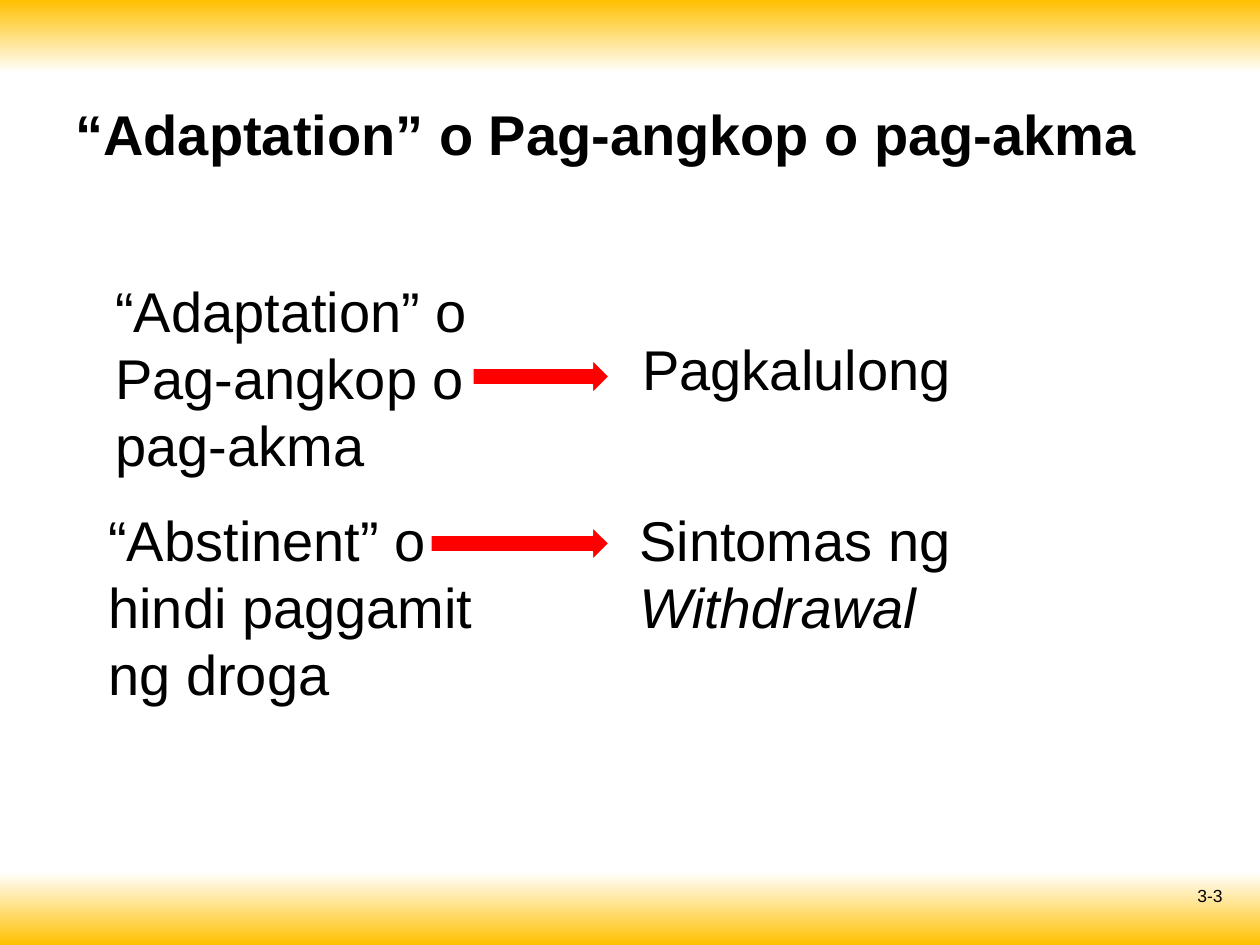
import pptx
import pptx.util
import pptx.dml.color
import pptx.enum.shapes
import pptx.enum.text

COLORS = {"gold": "FFC000", "white": "FFFFFF", "red": "FF0000", "black": "000000"}
FONT = "Arial"
PX = 914400 / 126
WIDTH, HEIGHT, BAND = 1260, 945, 73

# top, color at the upper edge, color at the lower edge
BANDS = [(HEIGHT - BAND, "white", "gold"), (0, "gold", "white")]

TITLE = ("“Adaptation” o Pag-angkop o pag-akma", (63, 54, 1121, 158))
PAGE_NUMBER = ("3-3", (941, 879, 294, 66))

# (text, italic) spans and the box that holds them
CAUSES_AND_EFFECTS = [
    ([("“Adaptation” o Pag-angkop o pag-akma", False)], (103, 270, 441, 217)),
    ([("“Abstinent” o hindi paggamit ng droga", False)], (96, 499, 441, 217)),
    ([("Pagkalulong", False)], (630, 328, 441, 81)),
    ([("Sintomas ng ", False), ("Withdrawal", True)], (627, 499, 588, 149)),
]

ARROW_TIP, ARROW_HEIGHT = 609, 33
ARROWS = [(473, 360), (431, 527)]  # left, top


def emu(*lengths):
    return [pptx.util.Emu(round(length * PX)) for length in lengths]


def rgb(name):
    return pptx.dml.color.RGBColor.from_string(COLORS[name])


def add_shape(page, kind, area):
    shape = page.shapes.add_shape(kind, *emu(*area))
    shape.shadow.inherit = False
    return shape


def add_band(page, top, upper, lower):
    band = add_shape(page, pptx.enum.shapes.MSO_SHAPE.RECTANGLE, (0, top, WIDTH, BAND))
    band.line.fill.background()
    band.fill.gradient()
    band.fill.gradient_angle = 270
    for stop, name, position in zip(band.fill.gradient_stops, (upper, lower), (0, 1)):
        stop.color.rgb = rgb(name)
        stop.position = position


def add_arrow(page, left, top):
    area = (left, top, ARROW_TIP - left, ARROW_HEIGHT)
    arrow = add_shape(page, pptx.enum.shapes.MSO_SHAPE.RIGHT_ARROW, area)
    arrow.fill.solid()
    arrow.fill.fore_color.rgb = rgb("red")
    arrow.line.color.rgb = rgb("white")
    arrow.line.width = pptx.util.Pt(0.75)


def add_text(page, spans, area, size=32, bold=False):
    box = page.shapes.add_textbox(*emu(*area))
    box.text_frame.word_wrap = True
    para = box.text_frame.paragraphs[0]
    para.font.name = FONT
    para.font.size = pptx.util.Pt(size)
    para.font.bold = bold
    para.font.color.rgb = rgb("black")
    for text, italic in spans:
        span = para.add_run()
        span.text = text
        if italic:
            span.font.italic = True
    return box


def main():
    deck = pptx.Presentation()
    deck.slide_width, deck.slide_height = emu(WIDTH, HEIGHT)
    page = deck.slides.add_slide(deck.slide_layouts[6])

    for band in BANDS:
        add_band(page, *band)

    text, area = TITLE
    title = add_text(page, [(text, False)], area, bold=True)
    title.text_frame.vertical_anchor = pptx.enum.text.MSO_ANCHOR.MIDDLE

    for spans, area in CAUSES_AND_EFFECTS:
        add_text(page, spans, area)
    for arrow in ARROWS:
        add_arrow(page, *arrow)

    text, area = PAGE_NUMBER
    number = add_text(page, [(text, False)], area, size=10)
    number.text_frame.paragraphs[0].alignment = pptx.enum.text.PP_ALIGN.RIGHT

    deck.save("out.pptx")


if __name__ == "__main__":
    main()
